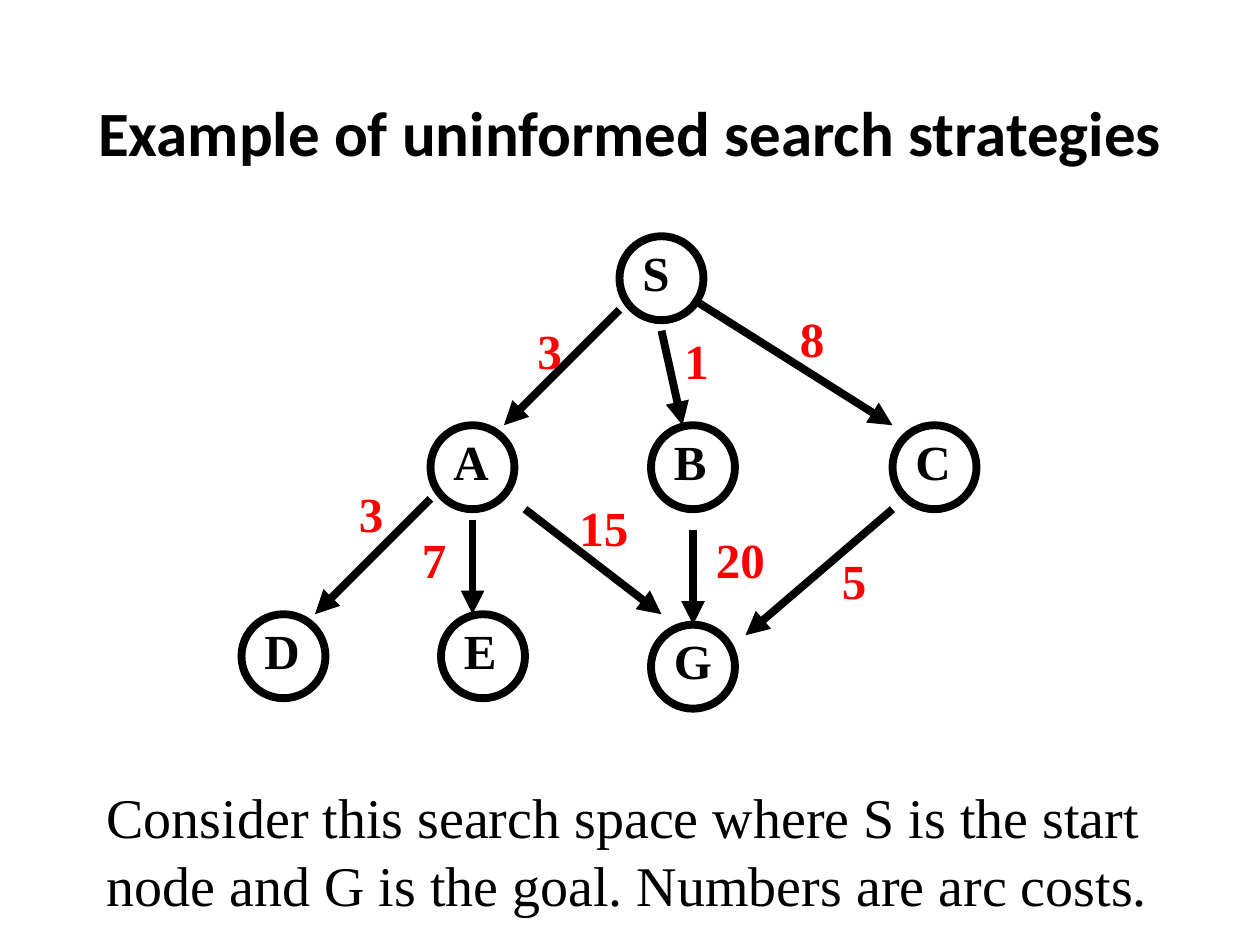
import pptx
import pptx.util
import pptx.dml.color
import pptx.enum.shapes
import pptx.enum.text
import pptx.oxml.ns
import lxml.etree

Cm, Pt = pptx.util.Cm, pptx.util.Pt
RGB = pptx.dml.color.RGBColor
ANCHOR = pptx.enum.text.MSO_ANCHOR
ALIGN = pptx.enum.text.PP_ALIGN
BLACK = RGB(0x00, 0x00, 0x00)
RED = RGB(0xFF, 0x00, 0x00)

TITLE = "Example of uninformed search strategies"
CAPTION = ("Consider this search space where S is the start node and G is the goal. "
           "Numbers are arc costs.")

# The graph is laid out on a grid of twelve steps to the inch
STEP = 2.54 / 12
NODE_SIZE = 8
LABEL_HEIGHT = 6.87
DIGIT_WIDTH, LABEL_PADDING = 2.35, 2.4

# name, left, top, label width
NODES = [
    ("S", 59, 22.5, 5.0),
    ("C", 85, 40.5, 5.8),
    ("B", 62, 40.5, 5.5),
    ("A", 41, 40.5, 5.8),
    ("D", 23, 58.5, 5.8),
    ("G", 62, 59.5, 6.0),
    ("E", 42, 58.5, 5.5),
]

# start, end, cost, left and top of the cost
ARCS = [
    ((59, 29.5), (48, 40.5), "3", (50, 29.9)),    # S to A
    ((63, 31.5), (65, 40.5), "1", (64, 30.9)),    # S to B
    ((66, 28.5), (85, 40.5), "8", (75, 28.8)),    # S to C
    ((50, 48.5), (63, 58.5), "15", (54, 46.8)),   # A to G
    ((66, 50.5), (66, 59.5), "20", (67, 49.8)),   # B to G
    ((85, 48.5), (71, 60.5), "5", (79, 51.8)),    # C to G
    ((41, 47.5), (30, 58.5), "3", (33, 45.5)),    # A to D
    ((45, 49.5), (45, 58.5), "7", (39, 49.8)),    # A to E
]


def grid(*steps):
    return [Cm(step * STEP) for step in steps]


def add_text(slide, text, box, size=28, font="Times New Roman", color=BLACK,
             bold=True, wrap=False, align=ALIGN.LEFT, anchor=ANCHOR.TOP):
    frame = slide.shapes.add_textbox(*box).text_frame
    frame.word_wrap = wrap
    frame.vertical_anchor = anchor
    paragraph = frame.paragraphs[0]
    paragraph.alignment = align
    run = paragraph.add_run()
    run.text = text
    run.font.size = Pt(size)
    run.font.name = font
    run.font.bold = bold
    run.font.color.rgb = color


def add_node(slide, name, left, top, label_width):
    circle = slide.shapes.add_shape(pptx.enum.shapes.MSO_SHAPE.OVAL,
                                    *grid(left, top, NODE_SIZE, NODE_SIZE))
    circle.shadow.inherit = False
    circle.fill.background()
    circle.line.color.rgb = BLACK
    circle.line.width = Pt(4.5)
    add_text(slide, name, grid(left + 1, top, label_width, LABEL_HEIGHT))


def add_arrow(slide, start, end):
    arrow = slide.shapes.add_connector(pptx.enum.shapes.MSO_CONNECTOR.STRAIGHT,
                                       *grid(*start, *end))
    arrow.line.color.rgb = BLACK
    arrow.line.width = Pt(4.5)
    qn = pptx.oxml.ns.qn
    lxml.etree.SubElement(arrow.line._get_or_add_ln(), qn("a:tailEnd"), type="triangle")
    lxml.etree.SubElement(arrow._element.spPr, qn("a:effectLst"))


def main():
    deck = pptx.Presentation()
    deck.slide_width, deck.slide_height = Cm(25.4), Cm(19.05)
    slide = deck.slides.add_slide(deck.slide_layouts[6])

    # Title
    add_text(slide, TITLE, (Cm(1.06), Cm(1.06), Cm(23.28), Cm(3.18)), size=36,
             font="Calibri", wrap=True, align=ALIGN.CENTER, anchor=ANCHOR.MIDDLE)

    # Search graph: nodes, then arrows, then costs
    for node in NODES:
        add_node(slide, *node)
    for start, end, _, _ in ARCS:
        add_arrow(slide, start, end)
    for _, _, cost, corner in ARCS:
        width = LABEL_PADDING + DIGIT_WIDTH * len(cost)
        add_text(slide, cost, grid(*corner, width, LABEL_HEIGHT), color=RED)

    # Caption
    add_text(slide, CAPTION, (Cm(1.9), Cm(15.66), Cm(22.44), Cm(3)), size=32,
             bold=False, wrap=True)

    deck.save("out.pptx")


if __name__ == "__main__":
    main()
